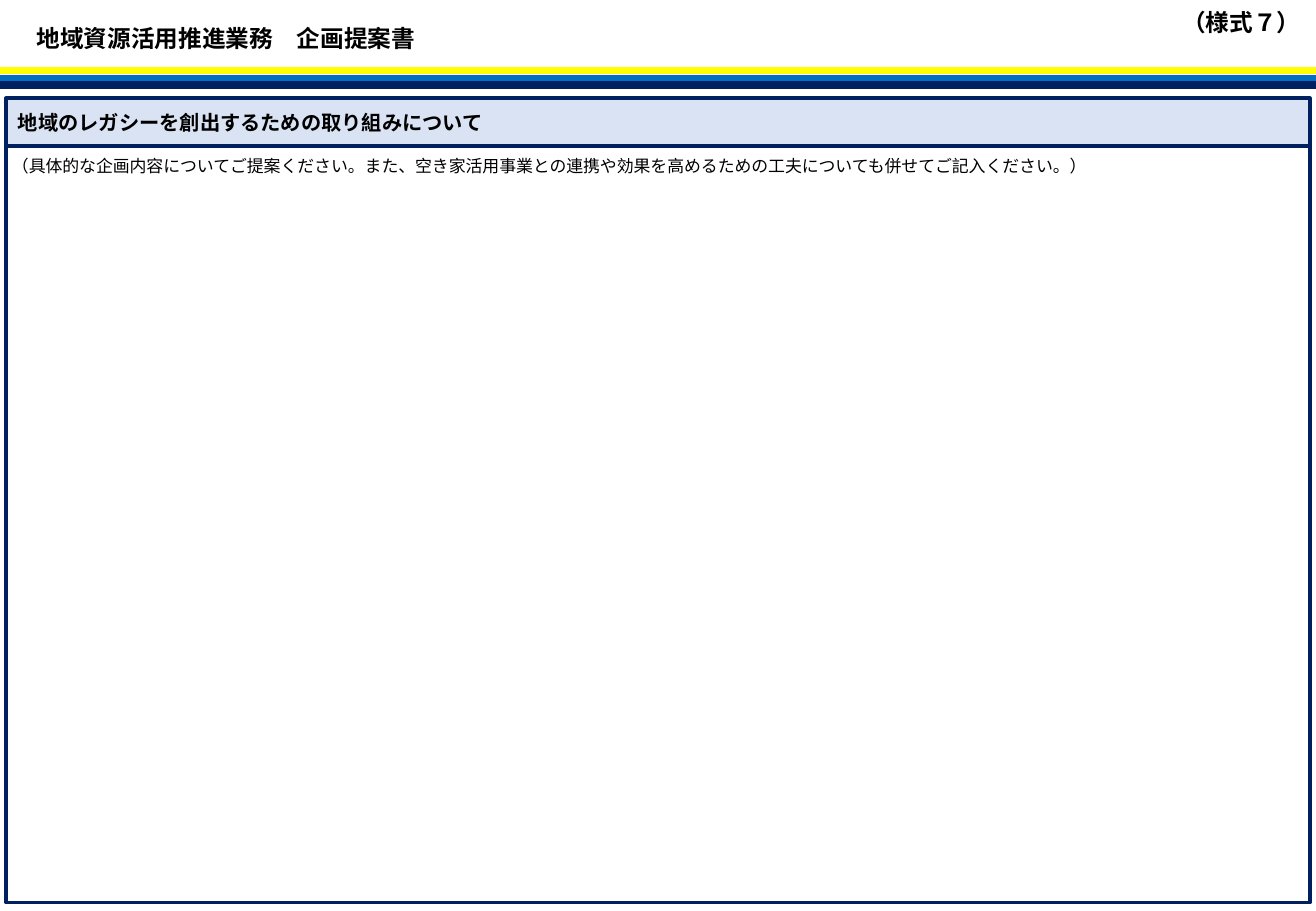
from lxml import etree
from pptx import Presentation
from pptx import util as u
from pptx.dml.color import RGBColor
from pptx.enum import shapes, text
from pptx.oxml import ns

FONT = "Noto Sans CJK JP"
BLACK = RGBColor(0x00, 0x00, 0x00)
WHITE = RGBColor(0xFF, 0xFF, 0xFF)
NAVY = RGBColor(0x00, 0x20, 0x60)
BLUE = RGBColor(0x00, 0x70, 0xC0)
YELLOW = RGBColor(0xFF, 0xFF, 0x00)
PALE_BLUE = RGBColor(0xDA, 0xE3, 0xF3)

WIDTH, HEIGHT = 10.83, 7.5
MARGIN = 0.05
HEADING_TOP, HEADING_HEIGHT = 0.81, 0.39
ANSWER_TOP = HEADING_TOP + HEADING_HEIGHT
PANEL_WIDTH = WIDTH - 2 * MARGIN
STRIPES = [(YELLOW, 0.58, 4.5), (BLUE, 0.65, 5), (NAVY, 0.7, 4.75)]


def inches(*lengths):
    return [u.Inches(length) for length in lengths]


def write(box, words, size, bold=False, spacing=1.0):
    frame = box.text_frame
    frame_format = {
        "word_wrap": True,
        "auto_size": text.MSO_AUTO_SIZE.NONE,
        "vertical_anchor": text.MSO_ANCHOR.MIDDLE,
    }
    for name, value in frame_format.items():
        setattr(frame, name, value)
    para = frame.paragraphs[0]
    para.alignment = text.PP_ALIGN.LEFT
    para.line_spacing = spacing
    span = para.add_run()
    span.text = words
    for name, value in {"name": FONT, "size": u.Pt(size), "bold": bold}.items():
        setattr(span.font, name, value)
    span.font.color.rgb = BLACK
    east_asian = etree.SubElement(span.font._element, ns.qn("a:ea"))
    east_asian.set("typeface", FONT)


def add_title(page, words, area):
    title = page.shapes.title
    for name, value in zip(("left", "top", "width", "height"), inches(*area)):
        setattr(title, name, value)
    write(title, words, 14, bold=True, spacing=0.9)


def add_label(page, words, area, size, **style):
    write(page.shapes.add_textbox(*inches(*area)), words, size, **style)


def add_panel(page, top, height, fill):
    panel = page.shapes.add_shape(
        shapes.MSO_SHAPE.RECTANGLE, *inches(MARGIN, top, PANEL_WIDTH, height))
    panel.shadow.inherit = False
    panel.fill.solid()
    panel.fill.fore_color.rgb = fill
    panel.line.color.rgb = NAVY
    panel.line.width = u.Pt(2.25)
    return panel


def add_stripe(page, color, y, weight):
    stripe = page.shapes.add_connector(
        shapes.MSO_CONNECTOR.STRAIGHT, *inches(0, y, WIDTH, y))
    stripe.line.color.rgb = color
    stripe.line.width = u.Pt(weight)
    etree.SubElement(stripe._element.spPr, ns.qn("a:effectLst"))


def main():
    deck = Presentation()
    deck.slide_width, deck.slide_height = inches(WIDTH, HEIGHT)
    page = deck.slides.add_slide(deck.slide_layouts.get_by_name("Title Only"))

    add_panel(page, ANSWER_TOP, HEIGHT - 0.07 - ANSWER_TOP, WHITE)
    heading = add_panel(page, HEADING_TOP, HEADING_HEIGHT, PALE_BLUE)
    write(heading, "地域のレガシーを創出するための取り組みについて", 12, bold=True)

    add_label(page, "（様式７）", (WIDTH - 1.2, -0.06, 1.2, 0.52), 14,
              bold=True, spacing=0.9)
    add_title(page, "地域資源活用推進業務　企画提案書", (0.2, 0.07, 6.18, 0.52))
    for stripe in STRIPES:
        add_stripe(page, *stripe)
    add_label(page, "（具体的な企画内容についてご提案ください。また、空き家活用事業との連携や"
              "効果を高めるための工夫についても併せてご記入ください。）",
              (0, ANSWER_TOP, 10.19, 0.33), 10)

    deck.save("out.pptx")


if __name__ == "__main__":
    main()
